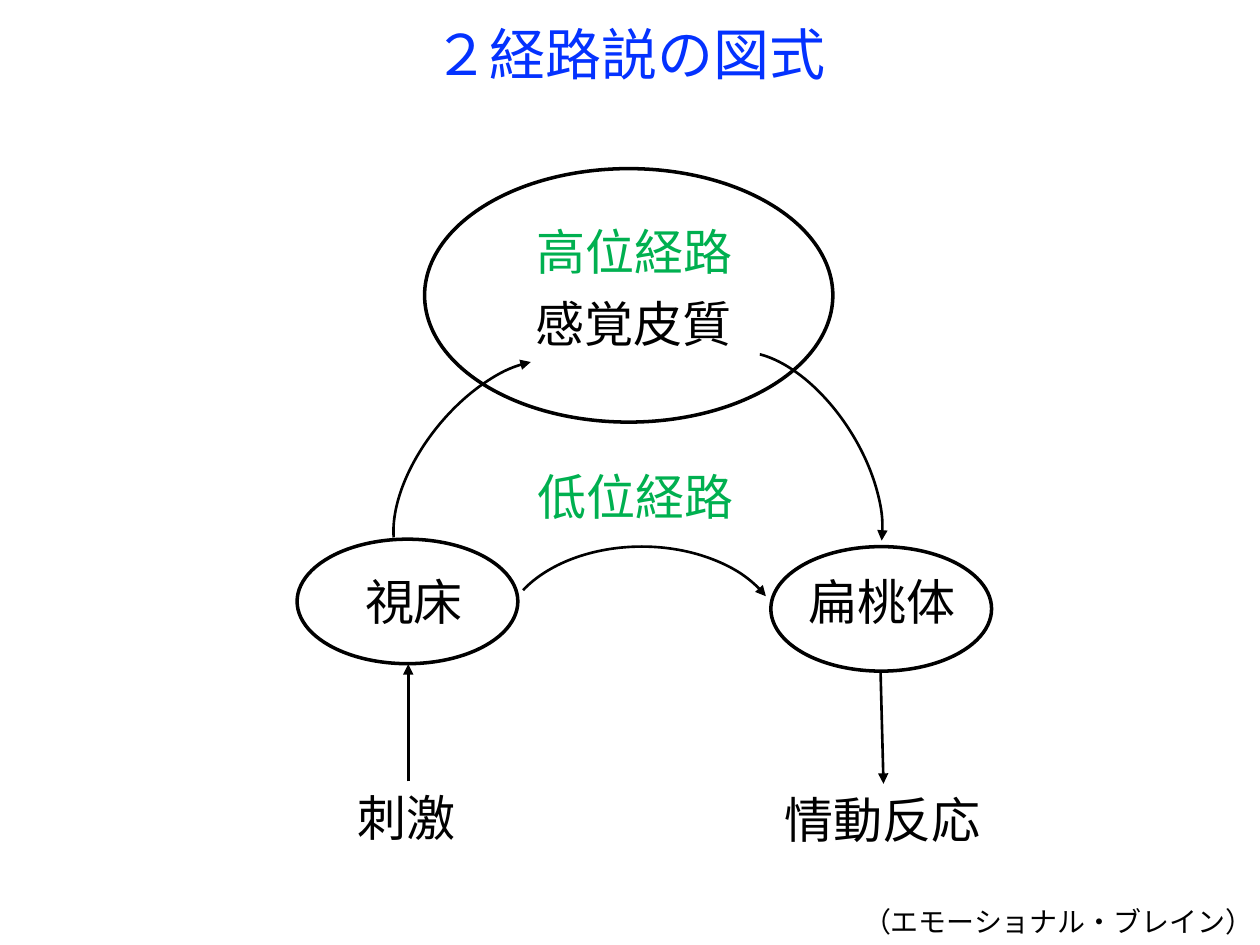
"""Draw the two-pathway diagram of emotion on one slide."""
import pptx
import pptx.dml.color
import pptx.enum.shapes
import pptx.enum.text
import pptx.oxml.ns
import pptx.util
from lxml import etree

Cm, Pt = pptx.util.Cm, pptx.util.Pt
MSO_SHAPE = pptx.enum.shapes.MSO_SHAPE
BLACK, BLUE, GREEN = "000000", "0432FF", "00B050"


def rgb(value):
    return pptx.dml.color.RGBColor.from_string(value)


def sub(parent, tag, **attrs):
    return etree.SubElement(parent, pptx.oxml.ns.qn(tag), **attrs)


def write(tf, text, size=28, color=BLACK, font="Noto Sans CJK JP", align=None):
    p = tf.paragraphs[0]
    p.alignment = align
    r = p.add_run()
    r.text = text
    r.font.size = Pt(size)
    r.font.name = font
    r.font.color.rgb = rgb(color)
    sub(r.font._element, "a:ea", typeface=font)


class Diagram:
    def __init__(self, slide, color=BLACK, thin=1.5, thick=2):
        self.s, self.color, self.thin, self.thick = slide, color, thin, thick

    def title(self, text, x, y, w, h):
        tf = self.s.shapes.add_textbox(Cm(x), Cm(y), Cm(w), Cm(h)).text_frame
        tf.word_wrap = True
        tf.vertical_anchor = pptx.enum.text.MSO_ANCHOR.MIDDLE
        write(tf, text, size=32, color=BLUE, align=pptx.enum.text.PP_ALIGN.CENTER)

    def label(self, text, x, y, size=28, color=BLACK):
        w = Pt(size) * len(text) + Cm(0.51)
        h = Pt(size * 1.2) + Cm(0.25)
        tf = self.s.shapes.add_textbox(Cm(x), Cm(y), w, h).text_frame
        tf.word_wrap = False
        tf.auto_size = pptx.enum.text.MSO_AUTO_SIZE.SHAPE_TO_FIT_TEXT
        write(tf, text, size=size, color=color)

    def stroke(self, sp, width, arrow=False):
        sp.line.color.rgb = rgb(self.color)
        sp.line.width = Pt(width)
        if arrow:
            sub(sp.line._get_or_add_ln(), "a:tailEnd", type="triangle")

    def outline(self, kind, x, y, w, h):
        sp = self.s.shapes.add_shape(kind, Cm(x), Cm(y), Cm(w), Cm(h))
        sp.shadow.inherit = False
        sp.fill.background()
        return sp

    def ellipse(self, x, y, w=4.45, h=2.51):
        self.stroke(self.outline(MSO_SHAPE.OVAL, x, y, w, h), self.thick)

    def arc(self, x, y, w=5.26, h=2.84, start=197.19, end=340.63, rotation=0):
        sp = self.outline(MSO_SHAPE.ARC, x, y, w, h)
        for i, degrees in enumerate((start, end)):
            sp.adjustments[i] = degrees * 0.6
        sp.rotation = rotation
        self.stroke(sp, self.thin, arrow=True)

    def arrow(self, x1, y1, x2, y2):
        sp = self.s.shapes.add_connector(
            pptx.enum.shapes.MSO_CONNECTOR.STRAIGHT, Cm(x1), Cm(y1), Cm(x2), Cm(y2))
        self.stroke(sp, self.thin, arrow=True)
        sub(sp._element.spPr, "a:effectLst")


def main():
    prs = pptx.Presentation()
    prs.slide_width, prs.slide_height = Cm(25.4), Cm(19.05)
    d = Diagram(prs.slides.add_slide(prs.slide_layouts[6]))
    d.title("２経路説の図式", 1.27, 0.25, 22.86, 1.63)
    for text, x, y in (("刺激", 6.96, 15.75), ("感覚皮質", 10.54, 5.79),
                       ("視床", 7.11, 11.4), ("扁桃体", 16.05, 11.4),
                       ("情動反応", 15.57, 15.8)):
        d.label(text, x, y)
    d.arrow(8.23, 15.75, 8.23, 13.39)
    d.arrow(17.75, 13.51, 17.81, 15.8)
    d.label("低位経路", 10.59, 9.27, color=GREEN)
    d.label("高位経路", 10.57, 4.34, color=GREEN)
    d.ellipse(5.99, 10.87)
    d.ellipse(15.54, 11.02)
    d.arc(10.11, 11.02, 5.66, 3.76, start=202.72)
    d.arc(7.29, 8.08, rotation=308.9)
    d.arc(13.31, 8.03, rotation=57.7)
    d.ellipse(8.56, 3.4, 8.23, 5.11)
    d.label("（エモーショナル・ブレイン）", 17.15, 18.11, size=16)
    prs.save("out.pptx")


if __name__ == "__main__":
    main()
